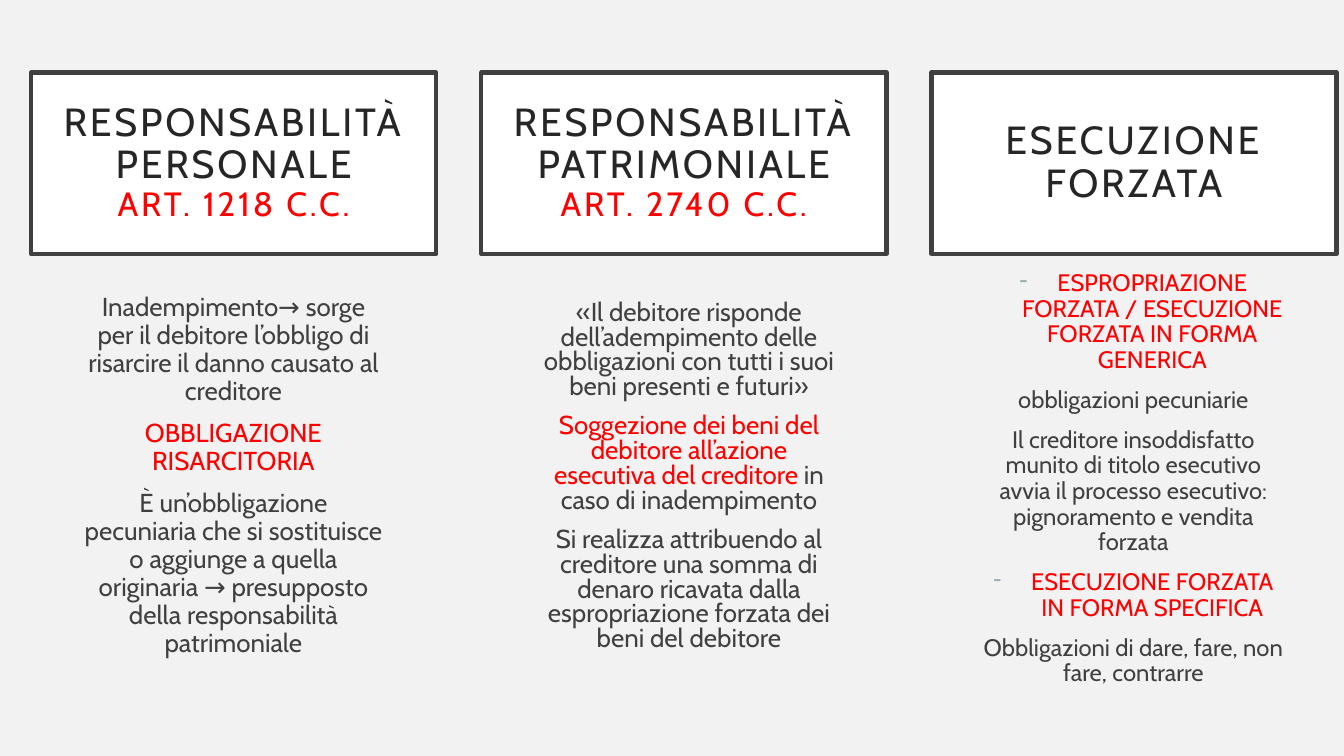
from lxml import etree
from pptx import Presentation
from pptx import util as u
from pptx.dml.color import RGBColor
from pptx.enum import shapes, text
from pptx.oxml import ns

Pt = u.Pt
FACE = "Cabin"
HUE = {"back": "F2F2F2", "white": "FFFFFF", "edge": "404040",
       "head": "262626", "body": "404040", "red": "FF0000", "dash": "9BAFB5"}

# Heading boxes: left edge of the first, step to the next
LEFT, STEP, TOP, WIDE, HIGH = 22.3, 321.5, 51.8, 289.4, 129.6

HEADS = [
    [("RESPONSABILITÀ PERSONALE", 28, "head"), ("ART. 1218 C.C.", 24, "red")],
    [("RESPONSABILITÀ PATRIMONIALE", 28, "head"), ("ART. 2740 C.C.", 24, "red")],
    [("ESECUZIONE FORZATA", 28, "head")],
]

# Columns: place, font size, line spacing, paragraphs as (bullet, runs)
BODIES = [
    ((52.6, 206.6, 228.2, 288.7), 18.5, 0.9, [
        (False, [("Inadempimento→ sorge per il debitore l’obbligo di risarcire "
                  "il danno causato al creditore", "body")]),
        (False, [("OBBLIGAZIONE RISARCITORIA", "red")]),
        (False, [("È un’obbligazione pecuniaria che si sostituisce o aggiunge a "
                  "quella originaria → presupposto della responsabilità "
                  "patrimoniale", "body")]),
    ]),
    ((378, 211.7, 228.2, 278.6), 18.5, 0.8, [
        (False, [("«Il debitore risponde dell’adempimento delle obbligazioni con "
                  "tutti i suoi beni presenti e futuri»", "body")]),
        (False, [("Soggezione dei beni del debitore all’azione esecutiva del "
                  "creditore ", "red"), ("in caso di inadempimento", "body")]),
        (False, [("Si realizza attribuendo al creditore una somma di denaro "
                  "ricavata dalla espropriazione forzata dei beni del debitore",
                  "body")]),
    ]),
    ((695.5, 190, 228.2, 329), 17, 0.9, [
        (True, [("ESPROPRIAZIONE FORZATA / ESECUZIONE FORZATA IN FORMA GENERICA",
                 "red")]),
        (False, [("obbligazioni pecuniarie", "body")]),
        (False, [("Il creditore insoddisfatto munito di titolo esecutivo avvia il "
                  "processo esecutivo: pignoramento e vendita forzata", "body")]),
        (True, [("ESECUZIONE FORZATA IN FORMA SPECIFICA", "red")]),
        (False, [("Obbligazioni di dare, fare, non fare, contrarre", "body")]),
    ]),
]


def tint(name):
    return RGBColor.from_string(HUE[name])


def next_para(frame, num):
    return frame.paragraphs[0] if num == 0 else frame.add_paragraph()


def add_dash(para):
    """Hanging dash bullet."""
    props = para._p.get_or_add_pPr()
    props.set("marL", str(Pt(27)))
    props.set("indent", str(-Pt(27)))
    color = etree.SubElement(props, ns.qn("a:buClr"))
    etree.SubElement(color, ns.qn("a:srgbClr"), val=HUE["dash"])
    etree.SubElement(props, ns.qn("a:buChar"), char="-")


def style(para, size, lines, gap):
    para.alignment = text.PP_ALIGN.CENTER
    para.line_spacing = lines
    para.space_before = Pt(gap)
    para.font.name = FACE
    para.font.size = Pt(size)


def fill_head(box, rows):
    """White framed box with spaced-out capitals."""
    box.fill.solid()
    box.fill.fore_color.rgb = tint("white")
    box.line.color.rgb = tint("edge")
    box.line.width = Pt(3)
    frame = box.text_frame
    frame.word_wrap = True
    frame.auto_size = text.MSO_AUTO_SIZE.NONE
    frame.vertical_anchor = text.MSO_ANCHOR.MIDDLE
    frame.margin_left = frame.margin_right = Pt(21.6)
    frame.margin_top = frame.margin_bottom = Pt(14.4)
    for num, (words, size, hue) in enumerate(rows):
        para = next_para(frame, num)
        style(para, size, 0.9, 0)
        para.font.color.rgb = tint(hue)
        run = para.add_run()
        run.text = words
        run._r.get_or_add_rPr().set("spc", "200")


def add_body(slide, place, size, lines, paras):
    frame = slide.shapes.add_textbox(*map(Pt, place)).text_frame
    frame.word_wrap = True
    for num, (dash, runs) in enumerate(paras):
        para = next_para(frame, num)
        if dash:
            add_dash(para)
        style(para, size, lines, 10 if num else 0)
        for words, hue in runs:
            run = para.add_run()
            run.text = words
            run.font.color.rgb = tint(hue)


def main():
    deck = Presentation()
    deck.slide_width, deck.slide_height = Pt(960), Pt(540)
    slide = deck.slides.add_slide(deck.slide_layouts[5])
    slide.background.fill.solid()
    slide.background.fill.fore_color.rgb = tint("back")

    # Headings: the first one is the slide title
    for col, rows in enumerate(HEADS):
        place = [Pt(n) for n in (LEFT + col * STEP, TOP, WIDE, HIGH)]
        if col == 0:
            box = slide.shapes.title
            box.left, box.top, box.width, box.height = place
        else:
            box = slide.shapes.add_shape(shapes.MSO_SHAPE.RECTANGLE, *place)
            box.shadow.inherit = False
        fill_head(box, rows)

    # Text columns
    for body in BODIES:
        add_body(slide, *body)

    deck.save("out.pptx")


if __name__ == "__main__":
    main()
